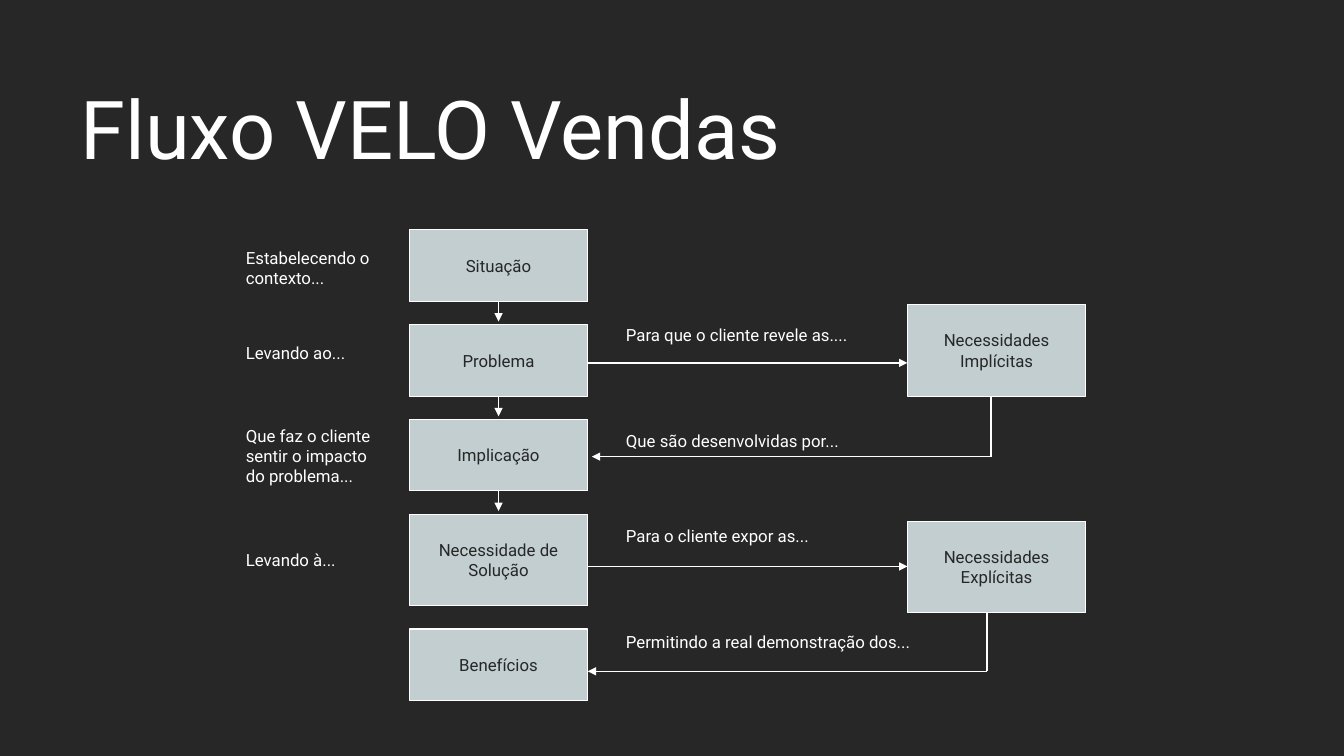
"""Build the sales question flow slide."""
from pptx import Presentation
from pptx.dml.color import RGBColor
from pptx.enum.shapes import MSO_CONNECTOR as CONN, MSO_SHAPE as SHAPE
from pptx.enum.text import MSO_ANCHOR as ANCHOR, MSO_AUTO_SIZE as AUTO, PP_ALIGN as ALIGN
from pptx.oxml.ns import qn
from pptx.util import Inches, Pt
from lxml import etree
from dataclasses import dataclass

TITLE = "Fluxo VELO Vendas"
STEPS = [("Situação", 1), ("Problema", 1), ("Implicação", 1),
         ("Necessidade de Solução", 2), ("Benefícios", 1)]
LINKED_STEPS = 4
CAPTIONS = [("Estabelecendo o contexto...", 2.41, 2), ("Levando ao...", 3.35, 1),
            ("Que faz o cliente sentir o impacto do problema...", 4.17, 3),
            ("Levando à...", 5.4, 1)]
NEEDS = [
    dict(text="Necessidades Implícitas", top=3.02, arrow_y=3.6, stem_x=9.83,
         return_y=4.53, return_x=5.87,
         notes=[("Para que o cliente revele as....", 3.17, 2.61),
                ("Que são desenvolvidas por...", 4.22, 2.61)]),
    dict(text="Necessidades Explícitas", top=5.17, arrow_y=5.62, stem_x=9.79,
         return_y=6.66, return_x=5.83,
         notes=[("Para o cliente expor as...", 5.17, 2.61),
                ("Permitindo a real demonstração dos...", 6.22, 3.16)]),
]

CAPTION_X, STEP_X, NOTE_X, NEED_X = 2.34, 4.06, 6.11, 9
CAPTION_W, BOX_W = 1.6, 1.77
BOX_H = {1: 0.71, 2: 0.91}
FIRST_STEP_Y, STEP_GAP, ARROW_LENGTH = 2.28, 0.23, 0.2
TEXT_PAD, TEXT_LINE = 0.1, 0.2


@dataclass(frozen=True)
class Theme:
    background: RGBColor = RGBColor.from_string("272728")
    box: RGBColor = RGBColor.from_string("C3CED0")
    dark: RGBColor = RGBColor.from_string("262727")
    light: RGBColor = RGBColor.from_string("FFFFFF")
    font: str = "Roboto"
    title: Pt = Pt(58)
    body: Pt = Pt(12)
    border: Pt = Pt(0.75)
    arrow: Pt = Pt(1)


THEME = Theme()


def write(shape, text, size, color, align=ALIGN.LEFT, anchor=ANCHOR.TOP):
    tf = shape.text_frame
    frame_format = dict(
        word_wrap=True, auto_size=AUTO.NONE, vertical_anchor=anchor,
        margin_left=Inches(0.1), margin_right=Inches(0.1),
        margin_top=Inches(0.05), margin_bottom=Inches(0.05))
    for name, value in frame_format.items():
        setattr(tf, name, value)
    p = tf.paragraphs[0]
    p.alignment = align
    r = p.add_run()
    r.text = text
    for name, value in dict(name=THEME.font, size=size, bold=False).items():
        setattr(r.font, name, value)
    r.font.color.rgb = color


def add_box(s, text, x, y, h):
    sp = s.shapes.add_shape(SHAPE.RECTANGLE, *map(Inches, (x, y, BOX_W, h)))
    sp.shadow.inherit = False
    sp.fill.solid()
    sp.fill.fore_color.rgb = THEME.box
    sp.line.color.rgb = THEME.light
    sp.line.width = THEME.border
    write(sp, text, THEME.body, THEME.dark, ALIGN.CENTER, ANCHOR.MIDDLE)


def add_label(s, text, x, y, w, lines=1):
    h = TEXT_PAD + lines * TEXT_LINE
    sp = s.shapes.add_textbox(*map(Inches, (x, y, w, h)))
    write(sp, text, THEME.body, THEME.light)


def add_line(s, x1, y1, x2, y2, head=True):
    line = s.shapes.add_connector(CONN.STRAIGHT, *map(Inches, (x1, y1, x2, y2)))
    line.line.color.rgb = THEME.light
    line.line.width = THEME.arrow
    if head:
        etree.SubElement(line.line._get_or_add_ln(), qn("a:tailEnd"), type="triangle")
    etree.SubElement(line._element.spPr, qn("a:effectLst"))


def add_steps(s):
    y, middle = FIRST_STEP_Y, STEP_X + BOX_W / 2
    for i, (text, lines) in enumerate(STEPS, 1):
        add_box(s, text, STEP_X, y, BOX_H[lines])
        y += BOX_H[lines]
        if i < LINKED_STEPS:
            add_line(s, middle, y, middle, y + ARROW_LENGTH)
        y += STEP_GAP


def add_need(s, need):
    add_box(s, need["text"], NEED_X, need["top"], BOX_H[2])
    add_line(s, STEP_X + BOX_W, need["arrow_y"], NEED_X, need["arrow_y"])
    x, y = need["stem_x"], need["return_y"]
    add_line(s, x, need["top"] + BOX_H[2], x, y, head=False)
    add_line(s, x, y, need["return_x"], y)
    for text, top, width in need["notes"]:
        add_label(s, text, NOTE_X, top, width)


def main():
    prs = Presentation()
    prs.slide_width, prs.slide_height = Inches(13.33), Inches(7.5)
    s = prs.slides.add_slide(prs.slide_layouts[5])
    s.background.fill.solid()
    s.background.fill.fore_color.rgb = THEME.background
    title = s.shapes.title
    for name, value in dict(left=0.7, top=0.73, width=8.97, height=1.08).items():
        setattr(title, name, Inches(value))
    write(title, TITLE, THEME.title, THEME.light)
    add_steps(s)
    for text, top, lines in CAPTIONS:
        add_label(s, text, CAPTION_X, top, CAPTION_W, lines)
    for need in NEEDS:
        add_need(s, need)
    prs.save("out.pptx")


if __name__ == "__main__":
    main()
